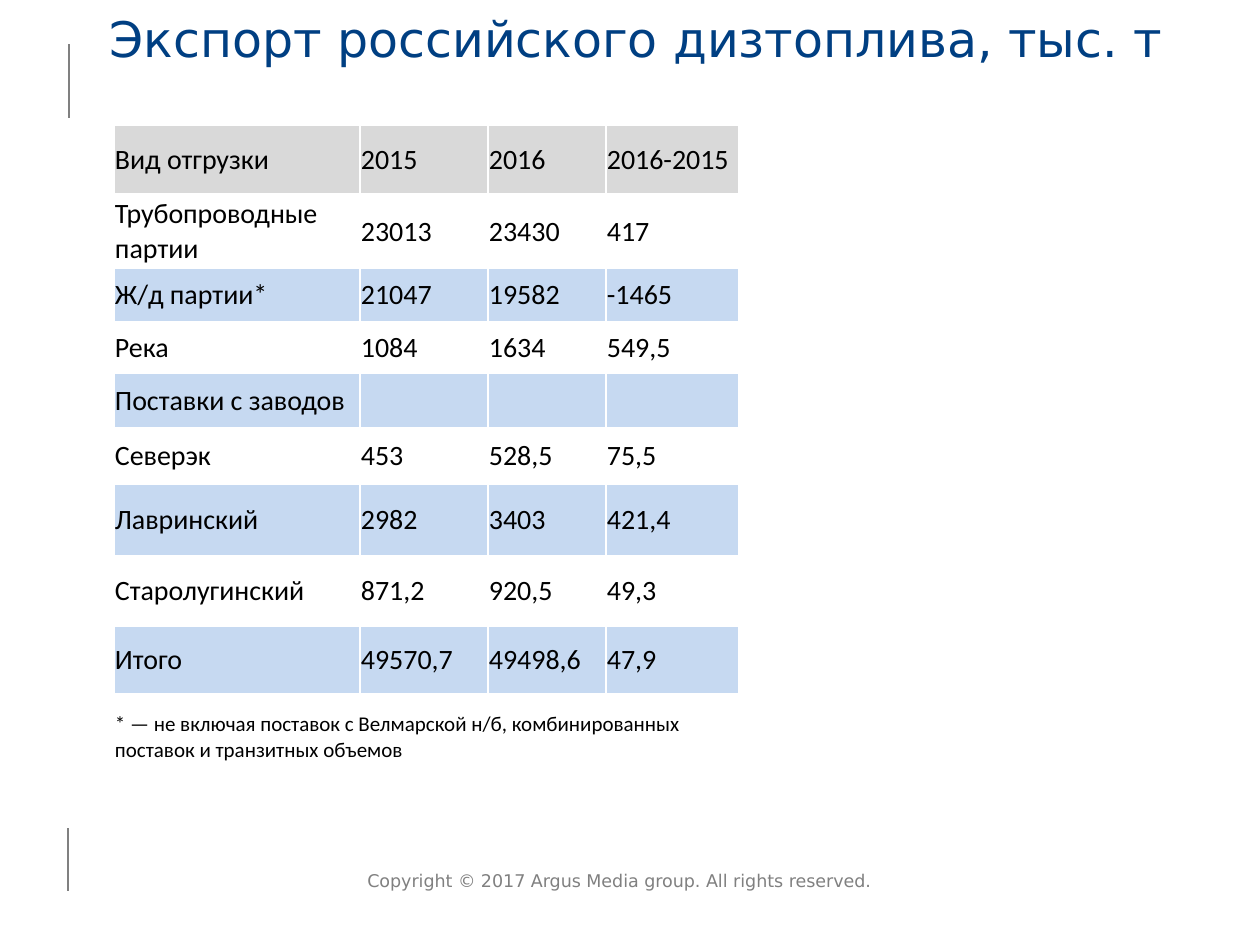
"""Build a slide with a table of diesel exports by shipment type."""
from lxml.etree import SubElement
from pptx import Presentation
from pptx.dml.color import RGBColor
from pptx.enum.shapes import MSO_CONNECTOR
from pptx.enum.text import MSO_ANCHOR, PP_ALIGN
from pptx.oxml.ns import qn
from pptx.util import Pt

SCALE = 914400 / 126
COLORS = {
    "title": "003F82",
    "gray": "808080",
    "head": "D9D9D9",
    "band": "C6D9F1",
    "white": "FFFFFF",
    "text": "000000",
}
COLS = [246, 128, 118, 133]
ROWS = [69, 74, 54, 51, 55, 56, 72, 70, 68, 86]
DATA = [
    ["Вид отгрузки", "2015", "2016", "2016-2015"],
    ["Трубопроводные партии", "23013", "23430", "417"],
    ["Ж/д партии*", "21047", "19582", "-1465"],
    ["Река", "1084", "1634", "549,5"],
    ["Поставки с заводов", "", "", ""],
    ["Северэк", "453", "528,5", "75,5"],
    ["Лавринский", "2982", "3403", "421,4"],
    ["Старолугинский", "871,2", "920,5", "49,3"],
    ["Итого", "49570,7", "49498,6", "47,9"],
    ["* — не включая поставок с Велмарской н/б, комбинированных "
     "поставок и транзитных объемов", "", "", ""],
]


def px(*vals):
    return [round(val * SCALE) for val in vals]


def tint(name):
    return RGBColor.from_string(COLORS[name])


class Deck:
    def __init__(self):
        self.file = Presentation()
        self.file.slide_width, self.file.slide_height = px(1260, 945)
        self.slide = self.file.slides.add_slide(self.file.slide_layouts[5])
        self.sans = "DejaVu Sans"
        self.body = "Calibri"

    def style(self, frame, font, size, color):
        for para in frame.paragraphs:
            for run in para.runs:
                run.font.name = font
                run.font.size = Pt(size)
                run.font.color.rgb = tint(color)

    def title(self, text, *box):
        shape = self.slide.shapes.title
        shape.left, shape.top, shape.width, shape.height = px(*box)
        frame = shape.text_frame
        frame.text = text
        frame.margin_left = frame.margin_right = 0
        frame.margin_top = frame.margin_bottom = 0
        frame.vertical_anchor = MSO_ANCHOR.BOTTOM
        frame.paragraphs[0].alignment = PP_ALIGN.CENTER
        self.style(frame, self.sans, 28, "title")

    def label(self, text, *box):
        frame = self.slide.shapes.add_textbox(*px(*box)).text_frame
        frame.word_wrap = True
        frame.text = text
        self.style(frame, self.sans, 10, "gray")

    def line(self, *ends):
        line = self.slide.shapes.add_connector(MSO_CONNECTOR.STRAIGHT, *px(*ends))
        line.line.color.rgb = tint("gray")
        line.line.width = Pt(0.75)
        SubElement(line._element.spPr, qn("a:effectLst"))

    def edge(self, cell):
        props = cell._tc.get_or_add_tcPr()
        for pos, side in enumerate(("lnL", "lnR", "lnT", "lnB")):
            edge = props.makeelement(qn(f"a:{side}"), {"w": str(Pt(1))})
            fill = SubElement(edge, qn("a:solidFill"))
            SubElement(fill, qn("a:srgbClr"), val=COLORS["white"])
            props.insert(pos, edge)

    def cell(self, cell, text, fill, size):
        cell.fill.solid()
        cell.fill.fore_color.rgb = tint(fill)
        self.edge(cell)
        cell.vertical_anchor = MSO_ANCHOR.MIDDLE
        cell.margin_left, cell.margin_right, cell.margin_top = px(1, 1, 1)
        cell.margin_bottom = 0
        cell.text_frame.text = text
        self.style(cell.text_frame, self.body, size, "text")

    def table(self, data, left, top):
        box = px(left, top, sum(COLS), sum(ROWS))
        table = self.slide.shapes.add_table(len(ROWS), len(COLS), *box).table
        table.first_row = table.horz_banding = False
        for col, width in zip(table.columns, px(*COLS)):
            col.width = width
        for row, height in zip(table.rows, px(*ROWS)):
            row.height = height
        last = len(data) - 1
        for r, row in enumerate(data):
            fill = "head" if r == 0 else "white" if r % 2 else "band"
            for c, text in enumerate(row):
                self.cell(table.cell(r, c), text, fill, 12 if r == last else 16)
        table.cell(last, 0).merge(table.cell(last, len(COLS) - 1))


def main():
    deck = Deck()
    deck.line(69, 118, 69, 44)
    deck.line(68, 891, 68, 828)
    deck.title("Экспорт российского дизтоплива, тыс. т", 84, 10, 1104, 57)
    deck.table(DATA, 114, 125)
    deck.label("Copyright © 2017 Argus Media group. All rights reserved.",
               355, 864, 630, 34)
    deck.file.save("out.pptx")


if __name__ == "__main__":
    main()
